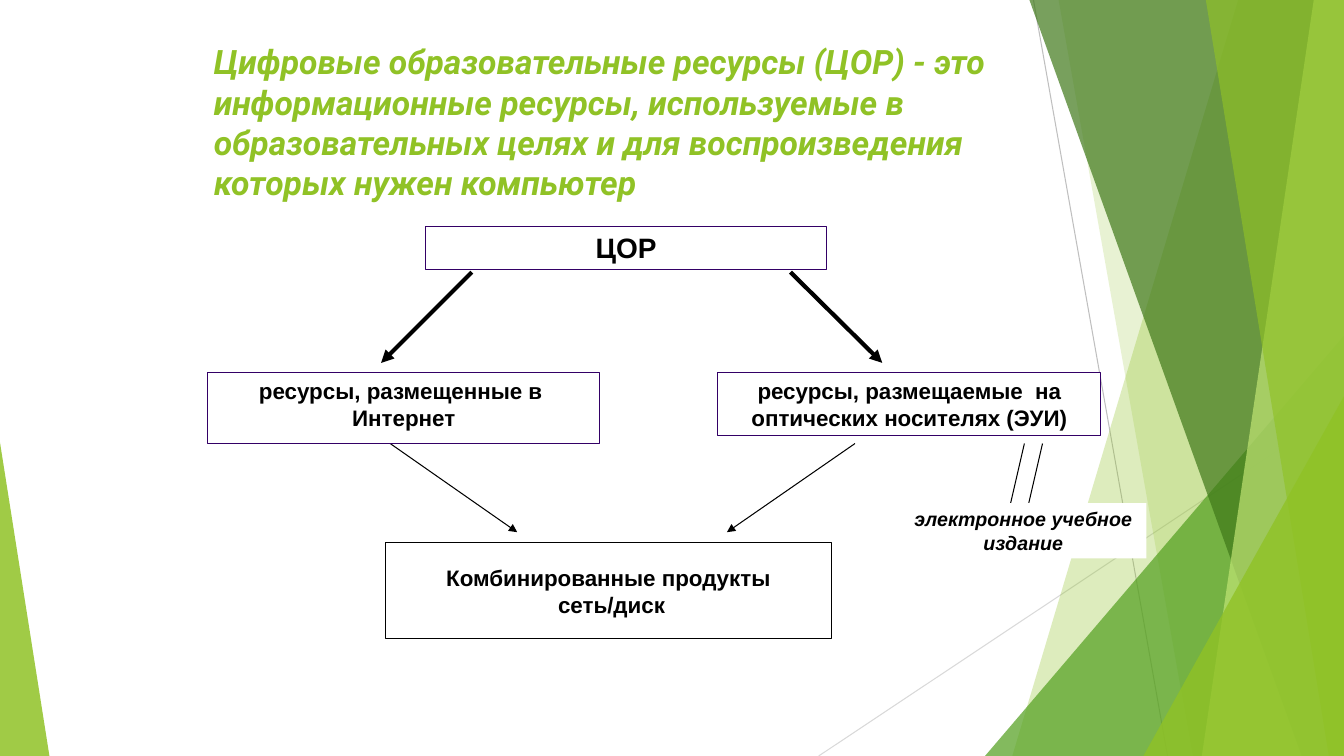
from dataclasses import dataclass

from lxml import etree
from pptx import Presentation
from pptx.dml.color import RGBColor
from pptx.enum import shapes, text
from pptx.oxml import ns
from pptx.util import Inches, Pt

WIDTH, HEIGHT = 13.33, 7.5


@dataclass(frozen=True)
class Theme:
    lime: str = "90C226"
    green: str = "54A021"
    dark_green: str = "3F7819"
    pale_lime: str = "C0E474"
    grey: str = "BFBFBF"
    light_grey: str = "D9D9D9"
    black: str = "000000"
    white: str = "FFFFFF"
    purple: str = "330066"
    title_font: str = "Roboto"
    body_font: str = "Arial"
    title_size: int = 24
    root_size: int = 20
    box_size: int = 16
    note_size: int = 14
    thin: float = 0.75
    thick: float = 3


def rgb(value):
    return RGBColor.from_string(value)


def write(tf, lines, *, font, size, color, italic=False,
          align=text.PP_ALIGN.CENTER, inset=(0.08, 0.04),
          anchor=text.MSO_ANCHOR.TOP):
    """Fill a text frame with one bold paragraph per line."""
    tf.word_wrap = True
    tf.auto_size = text.MSO_AUTO_SIZE.NONE
    tf.vertical_anchor = anchor
    tf.margin_left = tf.margin_right = Inches(inset[0])
    tf.margin_top = tf.margin_bottom = Inches(inset[1])
    for i, line in enumerate(lines):
        p = tf.add_paragraph() if i else tf.paragraphs[0]
        p.alignment = align
        r = p.add_run()
        r.text = line
        r.font.name, r.font.size = font, Pt(size)
        r.font.bold, r.font.italic = True, italic
        r.font.color.rgb = rgb(color)


class SlideBuilder:
    def __init__(self, slide, theme):
        self.slide, self.theme = slide, theme

    def title(self, box, words):
        t = self.theme
        sp = self.slide.shapes.title
        sp.left, sp.top, sp.width, sp.height = map(Inches, box)
        write(sp.text_frame, [words], font=t.title_font, size=t.title_size,
              color=t.lime, italic=True, align=text.PP_ALIGN.LEFT,
              inset=(0.1, 0.05))

    def paint(self, sp, color, opacity=100):
        sp.shadow.inherit = False
        sp.fill.solid()
        sp.fill.fore_color.rgb = rgb(color)
        sp.line.fill.background()
        if opacity < 100:
            clr = sp._element.spPr.find(".//" + ns.qn("a:srgbClr"))
            etree.SubElement(clr, ns.qn("a:alpha"), val=str(opacity * 1000))

    def band(self, top_x, bottom_x, color, opacity):
        """Full-height panel from a slanted left edge to the slide's right."""
        fb = self.slide.shapes.build_freeform(Inches(top_x), 0)
        corners = [(WIDTH, 0), (WIDTH, HEIGHT), (bottom_x, HEIGHT)]
        fb.add_line_segments([(Inches(x), Inches(y)) for x, y in corners])
        self.paint(fb.convert_to_shape(), color, opacity)

    def corner(self, left, top, width, apex, color, opacity):
        """Triangle standing on the slide's bottom edge."""
        sp = self.slide.shapes.add_shape(
            shapes.MSO_SHAPE.ISOSCELES_TRIANGLE, Inches(left), Inches(top),
            Inches(width), Inches(HEIGHT - top))
        sp.adjustments[0] = apex
        self.paint(sp, color, opacity)

    def line(self, start, end, color=None, width=None, arrow=False):
        t = self.theme
        cx = self.slide.shapes.add_connector(
            shapes.MSO_CONNECTOR.STRAIGHT, *map(Inches, (*start, *end)))
        cx.line.color.rgb = rgb(color or t.black)
        cx.line.width = Pt(width or t.thin)
        pr = cx._element.spPr
        if arrow:
            etree.SubElement(pr.find(ns.qn("a:ln")), ns.qn("a:tailEnd"),
                             type="triangle")
        etree.SubElement(pr, ns.qn("a:effectLst"))

    def box(self, area, lines, size, border=None, **fmt):
        t = self.theme
        sp = self.slide.shapes.add_shape(
            shapes.MSO_SHAPE.RECTANGLE, *map(Inches, area))
        self.paint(sp, t.white)
        if border:
            sp.line.color.rgb = rgb(border)
            sp.line.width = Pt(t.thin)
        write(sp.text_frame, lines, font=t.body_font, size=size,
              color=t.black, **fmt)


def draw_backdrop(b):
    t = b.theme
    b.line((10.25, 0), (11.58, HEIGHT), t.grey)
    b.line((WIDTH, 4.03), (8.12, HEIGHT), t.light_grey)
    b.band(12.28, 10.04, t.lime, 30)
    b.band(10.5, 11.83, t.lime, 20)
    b.corner(9.77, 3.33, 3.56, 1, t.green, 72)
    b.band(10.21, 12.91, t.dark_green, 70)
    b.band(13.03, 11.92, t.pale_lime, 70)
    b.band(11.96, 13.18, t.lime, 65)
    b.corner(11.34, 3.93, 1.99, 1, t.lime, 80)
    b.corner(0, 4.39, 0.49, 0, t.lime, 85)


def draw_scheme(b):
    t = b.theme
    for x in (10.34, 10.16):
        b.line((x, 4.4), (x - 0.18, 5.18))
    for x1, x2 in ((3.87, 5.13), (8.48, 7.21)):
        b.line((x1, 4.4), (x2, 5.28), arrow=True)
    for x1, x2 in ((4.68, 3.78), (7.84, 8.75)):
        b.line((x1, 2.7), (x2, 3.6), width=t.thick, arrow=True)

    b.box((3.82, 5.38, 4.43, 0.96), ["Комбинированные продукты", " сеть/диск"],
          t.box_size, t.black, anchor=text.MSO_ANCHOR.MIDDLE)
    b.box((4.22, 2.25, 3.98, 0.42), ["ЦОР"], t.root_size, t.purple)
    b.box((2.06, 3.7, 3.89, 0.7), ["ресурсы, размещенные в ", "Интернет"],
          t.box_size, t.purple)
    b.box((8.93, 4.99, 2.44, 0.55), ["электронное учебное издание"],
          t.note_size, italic=True)
    b.box((7.12, 3.7, 3.8, 0.62),
          ["ресурсы, размещаемые  на оптических носителях (ЭУИ)"],
          t.box_size, t.purple)


def main():
    prs = Presentation()
    prs.slide_width, prs.slide_height = Inches(WIDTH), Inches(HEIGHT)
    title_only = prs.slide_layouts[5]
    b = SlideBuilder(prs.slides.add_slide(title_only), Theme())
    draw_backdrop(b)
    b.title((2.02, 0.36, 8.7, 1.83),
            "Цифровые образовательные ресурсы (ЦОР) - это информационные "
            "ресурсы, используемые в образовательных целях и для "
            "воспроизведения которых нужен компьютер")
    draw_scheme(b)
    prs.save("out.pptx")


if __name__ == "__main__":
    main()
